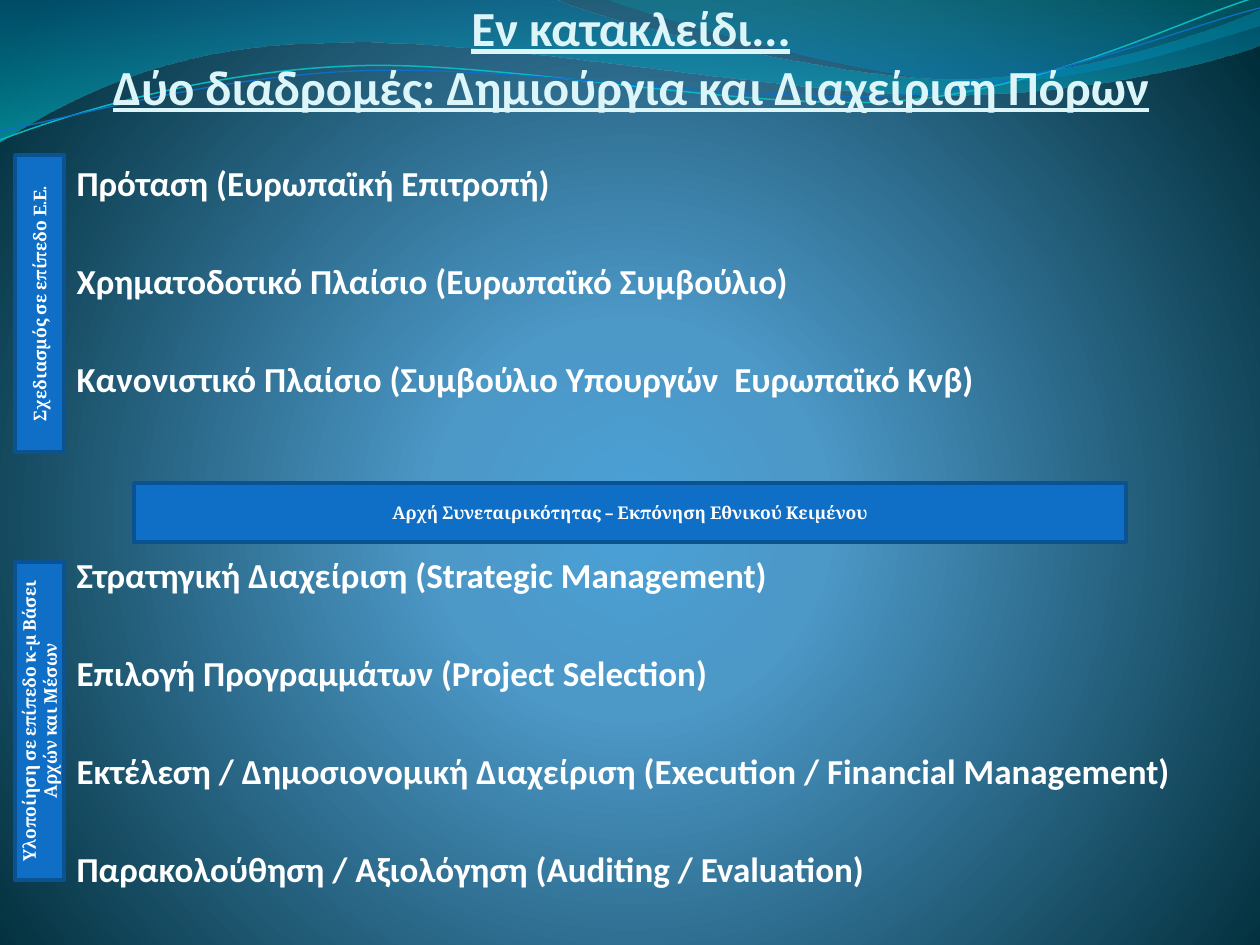
from itertools import chain

from lxml import etree
from pptx import Presentation
from pptx import util as u
from pptx.dml.color import RGBColor
from pptx.enum import shapes, text
from pptx.oxml import ns

PX = 914400 / 126

WHITE = RGBColor(0xFF, 0xFF, 0xFF)
PALE = RGBColor(0xDB, 0xF5, 0xF9)
BLUE = RGBColor(0x0F, 0x6F, 0xC6)
NAVY = RGBColor(0x0B, 0x52, 0x92)
AQUA = RGBColor(0x0A, 0xB8, 0xBF)
SKY = RGBColor(0x4A, 0xA0, 0xD6)
STEEL = RGBColor(0x4C, 0x98, 0xC7)
MIDNIGHT = RGBColor(0x00, 0x2C, 0x38)
OCEAN = RGBColor(0x00, 0x74, 0xA1)
TURQUOISE = RGBColor(0x00, 0xC6, 0xCF)
TEAL = RGBColor(0x00, 0xA1, 0xA9)
CERULEAN = RGBColor(0x00, 0x8B, 0xBF)

DOWNWARD = '<a:lin ang="5400000" scaled="1"/>'
RADIAL = ('<a:path path="circle"><a:fillToRect l="10000" t="110000" '
          'r="10000" b="100000"/></a:path>')

WAVE_BANDS = [
    ([[(0, -1)], [(554, -1)],
      [(600, 21), (837, 79), (955, 79)], [(1075, 79), (1207, 33), (1260, 11)],
      [(1261, 45)],
      [(1239, 55), (1096, 96), (940, 95)], [(784, 95), (481, 35), (324, 43)],
      [(163, 44), (58, 105), (-1, 142)]],
     [(0, OCEAN, 45), (100, TURQUOISE, 55)]),
    ([[(604, -1)],
      [(641, 14), (859, 78), (969, 82)], [(1079, 87), (1211, 40), (1260, 26)],
      [(1260, 0)]],
     [(0, TEAL, 30), (80, CERULEAN, 45)]),
]
WAVE_LINES = [
    ([[(0, 140)], [(60, 117), (199, 72), (349, 66)],
      [(498, 59), (747, 112), (898, 101)], [(1050, 89), (1182, 19), (1257, -3)]],
     AQUA, 0.85),
    ([[(0, 131)], [(59, 121), (207, 77), (357, 71)],
      [(508, 64), (752, 105), (903, 95)], [(1053, 84), (1186, 26), (1260, 8)]],
     BLUE, 0.75),
]

PLANNING = [
    "Πρόταση (Ευρωπαϊκή Επιτροπή)",
    "Χρηματοδοτικό Πλαίσιο (Ευρωπαϊκό Συμβούλιο)",
    "Κανονιστικό Πλαίσιο (Συμβούλιο Υπουργών  Ευρωπαϊκό Κνβ)",
]
IMPLEMENTATION = [
    "Στρατηγική Διαχείριση (Strategic Management)",
    "Επιλογή Προγραμμάτων (Project Selection)",
    "Εκτέλεση / Δημοσιονομική Διαχείριση (Execution / Financial Management)",
    "Παρακολούθηση / Αξιολόγηση (Auditing / Evaluation)",
]


def place(shape, box):
    shape.left, shape.top, shape.width, shape.height = (
        round(side * PX) for side in box)


def write(paragraph, words, *, size, font, color=WHITE, underline=None,
          align=text.PP_ALIGN.CENTER, before=0):
    paragraph.text = words
    paragraph.alignment = align
    paragraph.space_before = u.Pt(before)
    for run in paragraph.runs:
        run.font.size = u.Pt(size)
        run.font.name = font
        run.font.bold = True
        run.font.underline = underline
        run.font.color.rgb = color


def set_gradient(fill, parent, stops, direction):
    fill.solid()
    marks = "".join(
        f'<a:gs pos="{position * 1000}"><a:srgbClr val="{color}">'
        f'<a:alpha val="{opacity * 1000}"/></a:srgbClr></a:gs>'
        for position, color, opacity in stops)
    gradient = etree.fromstring(
        f'<a:gradFill {ns.nsdecls("a")} rotWithShape="1">'
        f'<a:gsLst>{marks}</a:gsLst>{direction}</a:gradFill>')
    parent.replace(parent.find(ns.qn("a:solidFill")), gradient)


def bend(outline, segments):
    strokes = iter(outline._element.findall(".//" + ns.qn("a:lnTo")))
    for segment in segments[1:]:
        legs = [next(strokes) for _ in segment]
        if len(legs) == 3:
            curve = etree.Element(ns.qn("a:cubicBezTo"))
            legs[0].addprevious(curve)
            for leg in legs:
                curve.append(leg[0])
                leg.getparent().remove(leg)


def add_outline(slide, segments, origin, close):
    left, top = origin
    points = [(left + x, top + y) for x, y in chain(*segments)]
    builder = slide.shapes.build_freeform(*points[0], scale=PX)
    builder.add_line_segments(points[1:], close=close)
    outline = builder.convert_to_shape()
    outline.shadow.inherit = False
    bend(outline, segments)
    return outline


def add_waves(slide, origin):
    for segments, stops in WAVE_BANDS:
        band = add_outline(slide, segments, origin, close=True)
        set_gradient(band.fill, band._element.spPr, stops, DOWNWARD)
        band.line.fill.background()
    for segments, color, width in WAVE_LINES:
        strand = add_outline(slide, segments, origin, close=False)
        strand.fill.background()
        strand.line.color.rgb = color
        strand.line.width = u.Pt(width)


def fill_title(heading, box):
    place(heading, box)
    frame = heading.text_frame
    frame.auto_size = text.MSO_AUTO_SIZE.NONE
    frame.vertical_anchor = text.MSO_ANCHOR.BOTTOM
    frame.margin_left = frame.margin_right = frame.margin_bottom = 0
    write(frame.paragraphs[0],
          "Εν κατακλείδι...\vΔύο διαδρομές: Δημιούργια και Διαχείριση Πόρων",
          size=28, font="Calibri", color=PALE, underline=True)


def fill_stages(stages, box):
    place(stages, box)
    frame = stages.text_frame
    frame.auto_size = text.MSO_AUTO_SIZE.NONE
    frame.vertical_anchor = text.MSO_ANCHOR.TOP
    for index, stage in enumerate(PLANNING + IMPLEMENTATION):
        paragraph = frame.paragraphs[0] if index == 0 else frame.add_paragraph()
        properties = paragraph._p.get_or_add_pPr()
        properties.set("marL", "0")
        properties.set("indent", "0")
        etree.SubElement(properties, ns.qn("a:buNone"))
        before = 0 if index == 0 else 88 if index == len(PLANNING) else 32
        write(paragraph, stage, size=20, font="Calibri",
              align=text.PP_ALIGN.LEFT, before=before)


def add_bar(slide, words, box, upward=False):
    bar = slide.shapes.add_shape(shapes.MSO_SHAPE.RECTANGLE, 0, 0, 0, 0)
    place(bar, box)
    bar.shadow.inherit = False
    bar.fill.solid()
    bar.fill.fore_color.rgb = BLUE
    bar.line.color.rgb = NAVY
    bar.line.width = u.Pt(2)
    frame = bar.text_frame
    frame.word_wrap = True
    frame.vertical_anchor = text.MSO_ANCHOR.MIDDLE
    if upward:
        frame._txBody.bodyPr.set("vert", "vert270")
    write(frame.paragraphs[0], words, size=10, font="Cambria")


def build_slide(presentation):
    slide = presentation.slides.add_slide(presentation.slide_layouts[1])
    heading, stages = slide.placeholders
    backdrop = slide.background.fill
    backdrop.solid()
    set_gradient(backdrop, slide._element.find(".//" + ns.qn("p:bgPr")),
                 [(0, SKY, 100), (25, STEEL, 100), (100, MIDNIGHT, 100)], RADIAL)
    add_waves(slide, (0, 0))
    for placeholder in (heading, stages):
        slide.shapes._spTree.append(placeholder._element)
    fill_title(heading, (64, 29, 1134, 86))
    fill_stages(stages, (64, 155, 1134, 771))
    add_bar(slide, "Σχεδιασμός σε επίπεδο Ε.Ε.", (15, 155, 49, 297), upward=True)
    add_bar(slide, "Υλοποίηση σε επίπεδο κ-μ Βάσει Αρχών και Μέσων",
            (15, 562, 49, 318), upward=True)
    add_bar(slide, "Αρχή Συνεταιρικότητας – Εκπόνηση Εθνικού Κειμένου",
            (134, 483, 992, 59))


def main():
    presentation = Presentation()
    presentation.slide_width = u.Inches(10)
    presentation.slide_height = u.Inches(7.5)
    build_slide(presentation)
    presentation.save("out.pptx")


if __name__ == "__main__":
    main()
